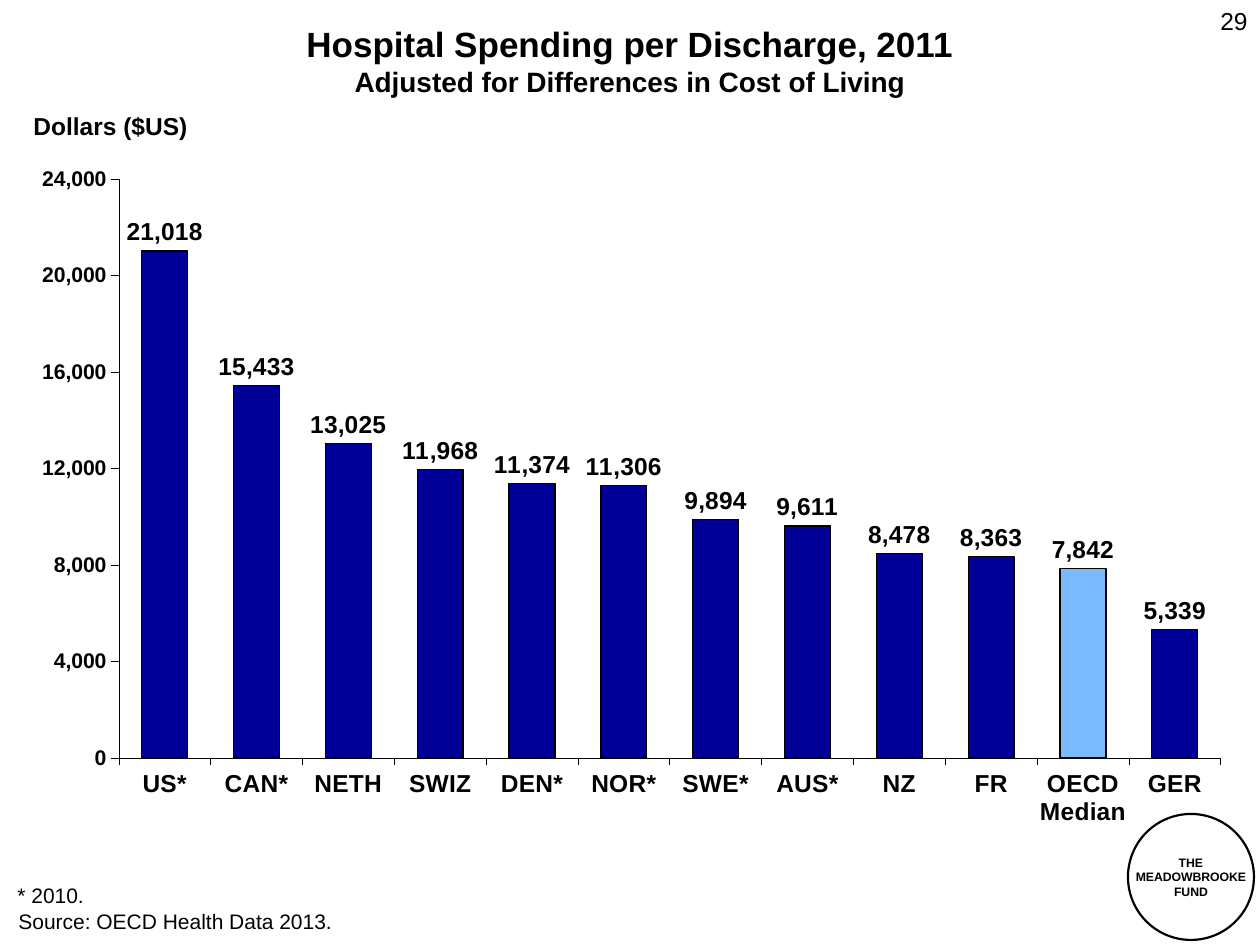
from dataclasses import dataclass

from lxml import etree
from pptx import Presentation
from pptx import util as u
from pptx.chart import data as chart_data
from pptx.dml import color
from pptx.enum import chart as charts, shapes, text
from pptx.oxml import ns

PX = 914400 / 126


@dataclass(frozen=True)
class Theme:
    font: str = "Arial"
    ink: str = "000000"
    bar: str = "000099"
    highlight: str = "7ABAFF"
    title: float = 20
    subtitle: float = 16
    label: float = 14
    axis: float = 12.1
    note: float = 12
    seal: float = 7


def emu(px):
    return u.Emu(round(px * PX))


def rgb(value):
    return color.RGBColor.from_string(value)


class SlideBuilder:
    def __init__(self, page, theme):
        self.page = page
        self.theme = theme

    def style(self, font, size, bold=False):
        font.name = self.theme.font
        font.size = u.Pt(size)
        font.bold = bold
        font.color.rgb = rgb(self.theme.ink)

    def outline(self, line, width):
        line.color.rgb = rgb(self.theme.ink)
        line.width = u.Pt(width)

    def fill_text(self, frame, lines, size, bold, align):
        for index, line in enumerate(lines):
            para = frame.add_paragraph() if index else frame.paragraphs[0]
            para.text = line
            para.alignment = align
            self.style(para.font, size, bold)

    def text(self, area, line, size, bold=False, align=text.PP_ALIGN.LEFT, wrap=True):
        box = self.page.shapes.add_textbox(*map(emu, area))
        box.text_frame.word_wrap = wrap
        self.fill_text(box.text_frame, [line], size, bold, align)

    def title(self, area, lines):
        box = self.page.shapes.add_textbox(*map(emu, area))
        frame = box.text_frame
        frame.word_wrap = True
        frame.vertical_anchor = text.MSO_ANCHOR.MIDDLE
        para = frame.paragraphs[0]
        para.alignment = text.PP_ALIGN.CENTER
        for index, (line, size) in enumerate(lines):
            if index:
                para.add_line_break()
            span = para.add_run()
            span.text = line
            self.style(span.font, size, True)

    def seal(self, area, lines):
        circle = self.page.shapes.add_shape(shapes.MSO_SHAPE.OVAL, *map(emu, area))
        circle.shadow.inherit = False
        circle.fill.background()
        self.outline(circle.line, 1.25)
        frame = circle.text_frame
        frame.word_wrap = False
        frame.vertical_anchor = text.MSO_ANCHOR.MIDDLE
        self.fill_text(frame, lines, self.theme.seal, True, text.PP_ALIGN.CENTER)

    def axis(self, axis, size):
        axis.has_major_gridlines = False
        axis.major_tick_mark = charts.XL_TICK_MARK.OUTSIDE
        axis.minor_tick_mark = charts.XL_TICK_MARK.NONE
        self.style(axis.tick_labels.font, size, True)
        self.outline(axis.format.line, 0.27)

    def place_plot(self, chart, **layout):
        area = chart._chartSpace.chart.plotArea
        for old in area.findall(ns.qn("c:layout")):
            area.remove(old)
        holder = etree.Element(ns.qn("c:layout"))
        manual = etree.SubElement(holder, ns.qn("c:manualLayout"))
        settings = {"layoutTarget": "inner", "xMode": "edge", "yMode": "edge", **layout}
        for name, value in settings.items():
            etree.SubElement(manual, ns.qn(f"c:{name}"), val=str(value))
        area.insert(0, holder)

    def columns(self, area, values, highlighted):
        source = chart_data.CategoryChartData(number_format="#,##0")
        source.categories = list(values)
        source.add_series("Spending per discharge", list(values.values()))
        frame = self.page.shapes.add_chart(
            charts.XL_CHART_TYPE.COLUMN_CLUSTERED, *map(emu, area), source
        )
        chart = frame.chart
        chart.has_legend = False
        chart.has_title = False
        self.style(chart.font, self.theme.label)
        self.axis(chart.category_axis, self.theme.label)
        self.axis(chart.value_axis, self.theme.axis)
        chart.value_axis.minimum_scale = 0
        chart.value_axis.maximum_scale = 24000
        chart.value_axis.major_unit = 4000
        chart.value_axis.tick_labels.number_format = "#,##0"
        chart.value_axis.tick_labels.number_format_is_linked = False
        self.place_plot(chart, x=0.074, y=0.073, w=0.927, h=0.811)

        plot = chart.plots[0]
        plot.gap_width = 100
        plot.vary_by_categories = False
        series = plot.series[0]
        point = series.points[list(values).index(highlighted)]
        for item, fill in ((series, self.theme.bar), (point, self.theme.highlight)):
            item.format.fill.solid()
            item.format.fill.fore_color.rgb = rgb(fill)
            self.outline(item.format.line, 0.75)
        labels = series.data_labels
        labels.show_value = True
        labels.position = charts.XL_LABEL_POSITION.OUTSIDE_END
        labels.number_format = "#,##0"
        labels.number_format_is_linked = False
        self.style(labels.font, self.theme.label, True)


def main():
    deck = Presentation()
    deck.slide_width, deck.slide_height = emu(1260), emu(945)
    theme = Theme()
    slide = SlideBuilder(deck.slides.add_slide(deck.slide_layouts[6]), theme)
    spending = {
        "US*": 21018, "CAN*": 15433, "NETH": 13025, "SWIZ": 11968,
        "DEN*": 11374, "NOR*": 11306, "SWE*": 9894, "AUS*": 9611,
        "NZ": 8478, "FR": 8363, "OECD Median": 7842, "GER": 5339,
    }
    slide.title((0, 10, 1260, 100), [
        ("Hospital Spending per Discharge, 2011", theme.title),
        ("Adjusted for Differences in Cost of Living", theme.subtitle),
    ])
    slide.columns((32, 127, 1189, 714), spending, "OECD Median")
    slide.text((21, 105, 180, 43), "Dollars ($US)", theme.label, bold=True, wrap=False)
    slide.text((966, 0, 294, 66), "29", theme.label, align=text.PP_ALIGN.RIGHT)
    slide.text((5, 876, 92, 38), "* 2010.", theme.note, wrap=False)
    slide.text((6, 902, 512, 38), "Source: OECD Health Data 2013.", theme.note)
    slide.seal((1128, 814, 126, 126), ["THE", "MEADOWBROOKE", "FUND"])
    deck.save("out.pptx")


if __name__ == "__main__":
    main()
